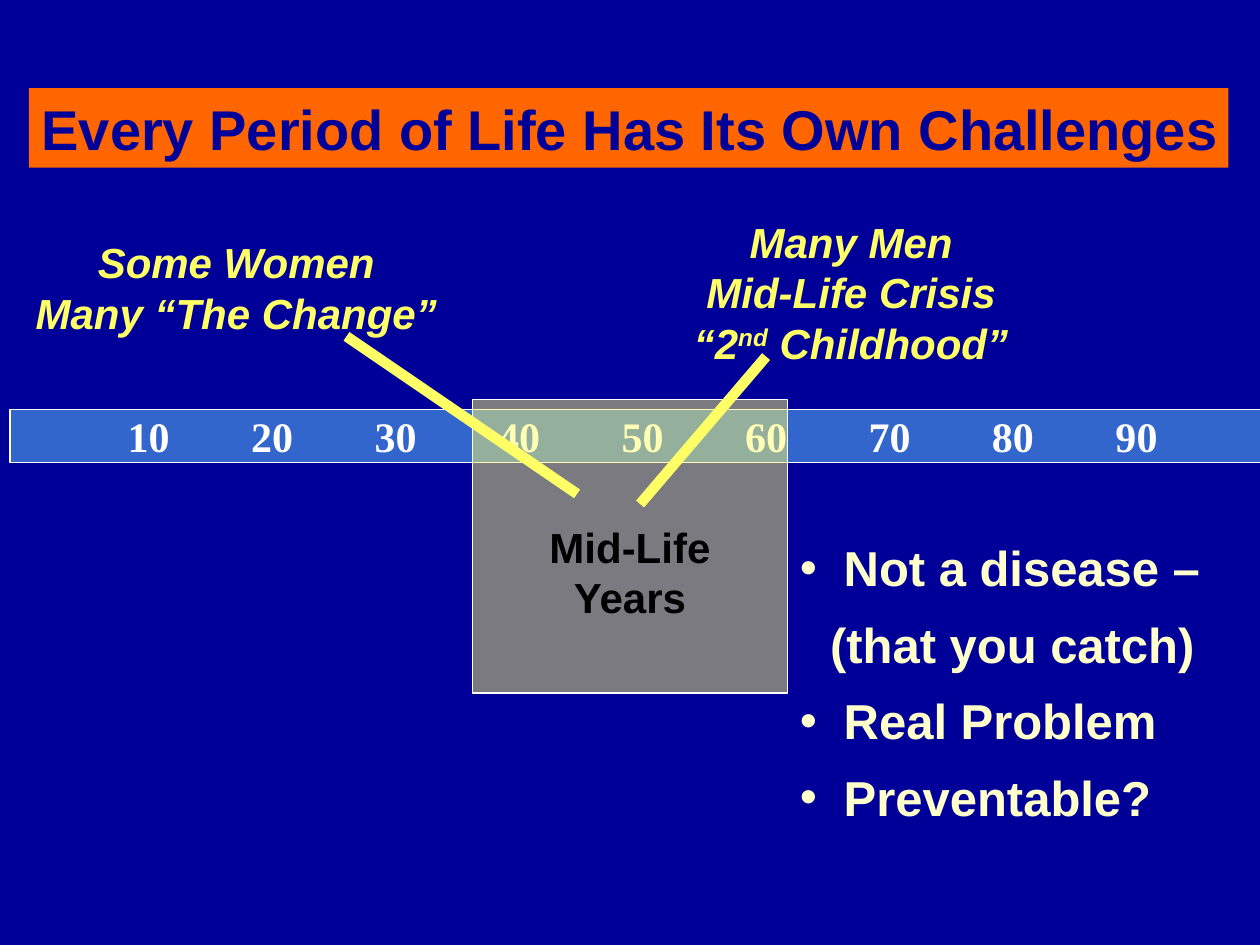
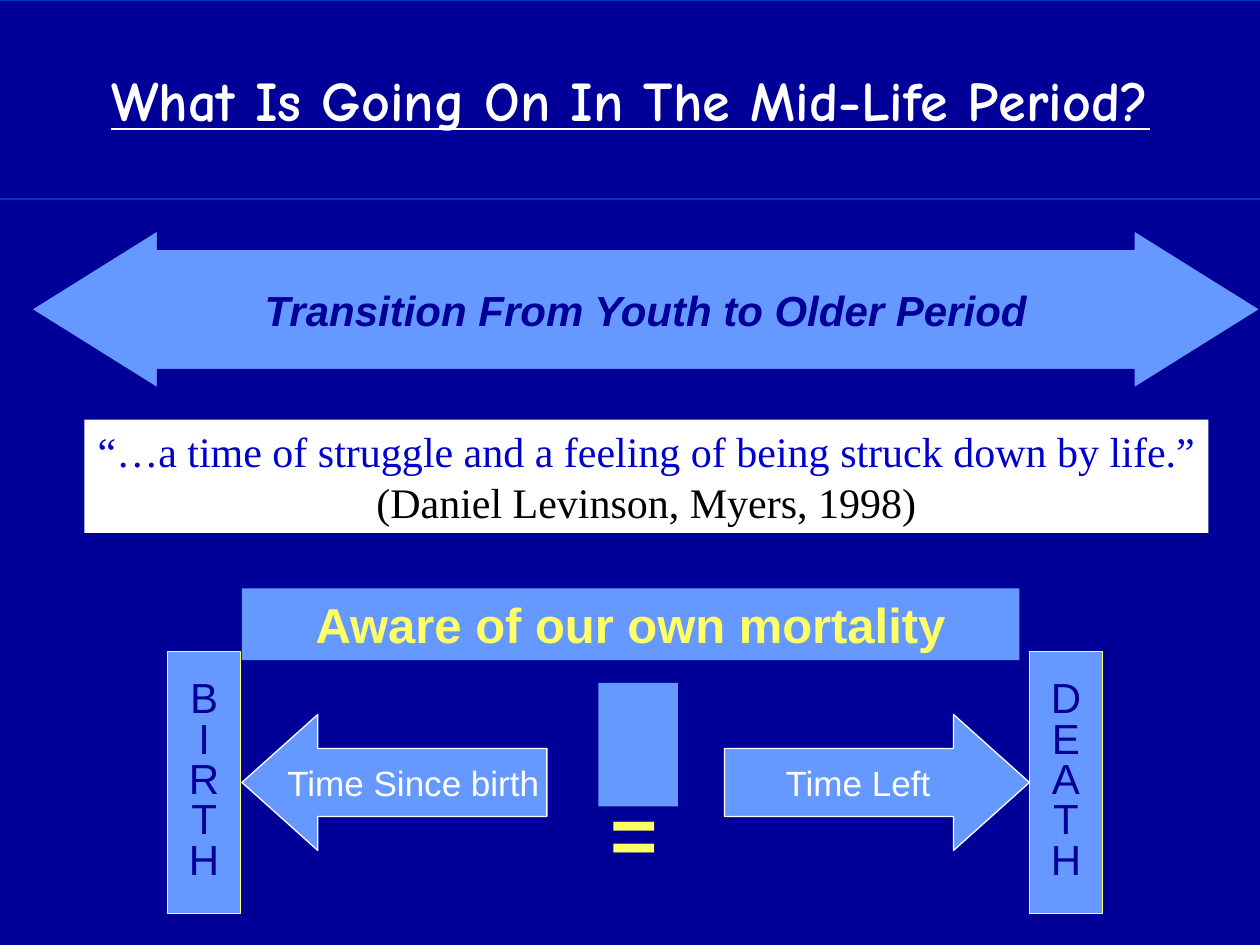
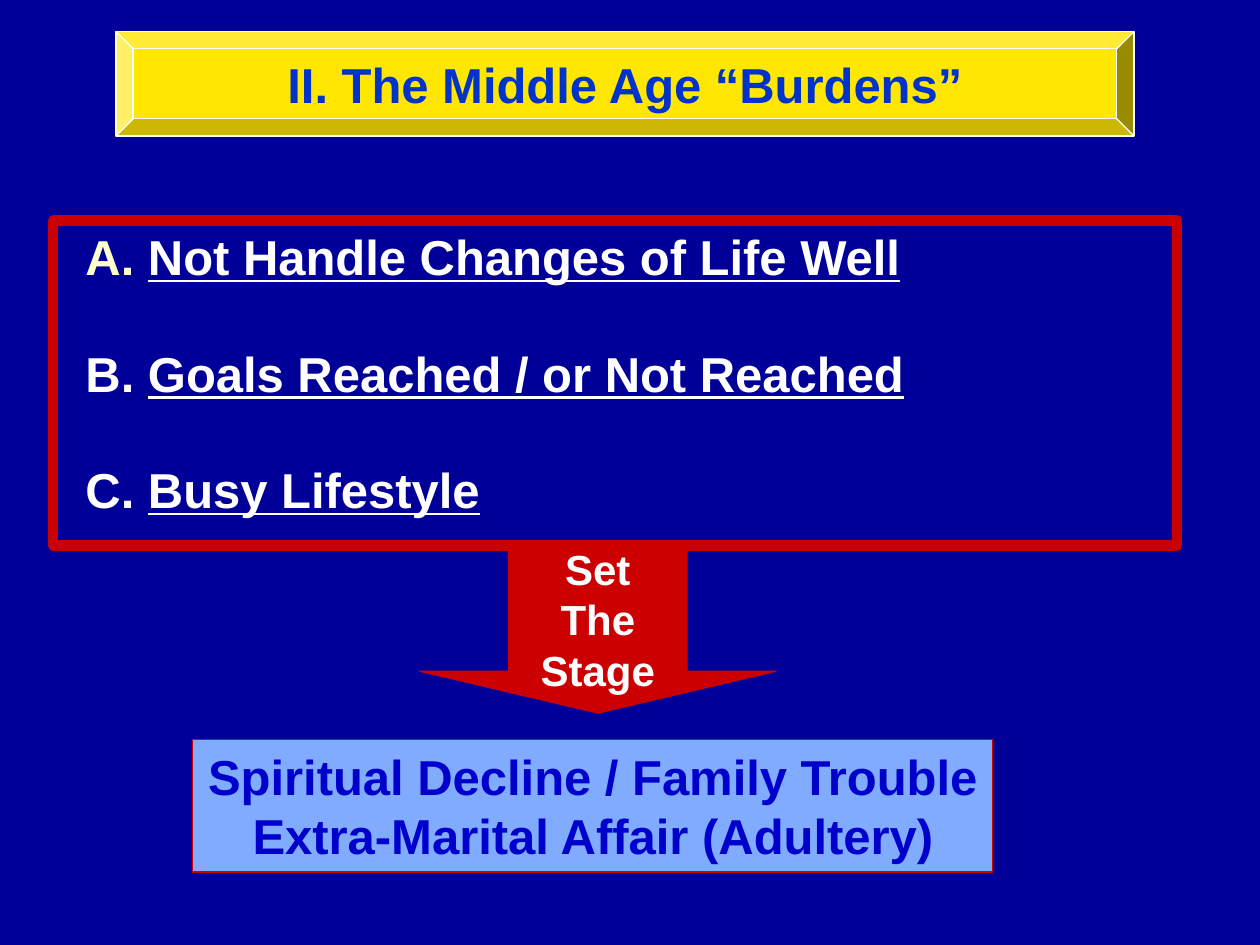
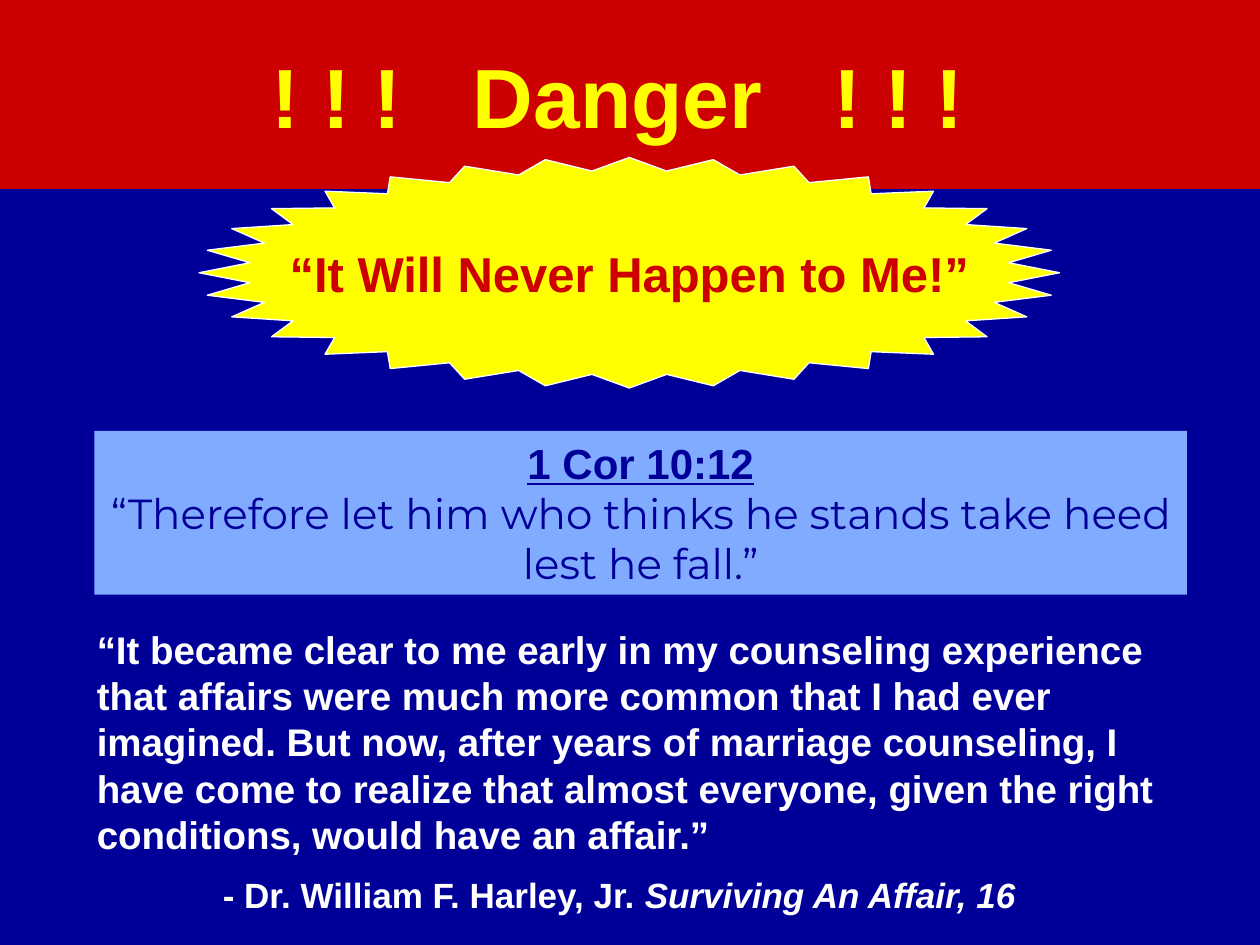
from lxml import etree
from pptx import Presentation
from pptx.dml.color import RGBColor
from pptx.enum.shapes import MSO_CONNECTOR, MSO_SHAPE
from pptx.enum.text import MSO_ANCHOR, MSO_AUTO_SIZE, PP_ALIGN
from pptx.oxml.ns import qn
from pptx.util import Inches, Pt

RECT, BEVEL, STAR = MSO_SHAPE.RECTANGLE, MSO_SHAPE.BEVEL, MSO_SHAPE.STAR_32_POINT
LEFT_ARROW, RIGHT_ARROW = MSO_SHAPE.LEFT_ARROW, MSO_SHAPE.RIGHT_ARROW
DOWN_ARROW, TWO_WAY = MSO_SHAPE.DOWN_ARROW, MSO_SHAPE.LEFT_RIGHT_ARROW
STRAIGHT = MSO_CONNECTOR.STRAIGHT
LEFT, CENTER = PP_ALIGN.LEFT, PP_ALIGN.CENTER
TOP, MIDDLE = MSO_ANCHOR.TOP, MSO_ANCHOR.MIDDLE
NO_AUTOSIZE = MSO_AUTO_SIZE.NONE

C = {"navy": "000099", "orange": "FF6600", "strip": "3366CC", "white": "FFFFFF",
     "lemon": "FFFF66", "cream": "FFFFCC", "black": "000000", "royal": "0033CC",
     "sky": "6699FF", "blue": "0000CC", "gold": "FFE701", "red": "CC0000",
     "pale": "81ABFF", "yellow": "FFFF00"}
W, H = 10, 7.5

# Content: a paragraph is a string or a list of (text, format changes)
AGES = range(10, 100, 10)
MIDLIFE = ["Mid-Life", "Years"]
WOMEN = ["Some Women", "Many “The Change”"]
MEN = ["Many Men", "Mid-Life Crisis",
       [("“2", {}), ("nd", {"baseline": 30}), (" Childhood”", {})]]
POINTS = [" Not a disease – (that you catch)", " Real Problem", " Preventable?"]
POINTERS = [((5.08, 4), (6.08, 2.83)), ((4.58, 3.92), (2.75, 2.67))]
LEVINSON = [[("“…a time of struggle and a feeling of being struck down by life.”", {}),
             (" (Daniel Levinson, Myers, 1998)", {"color": "black"})]]
ENDS = [("BIRTH", 1.33), ("DEATH", 8.17)]
TIMES = [("Time Since birth", LEFT_ARROW, 1.92), ("Time Left", RIGHT_ARROW, 5.75)]
BURDENS = [("A. ", "Not Handle Changes of Life Well", "cream"),
           ("B. ", "Goals Reached / or Not Reached", "white"),
           ("C. ", "Busy Lifestyle", "white")]
STAGE = ["Set", "The", "Stage"]
RESULTS = ["Spiritual Decline / Family Trouble", "Extra-Marital Affair (Adultery)"]
DANGER = ["! ! !", "Danger", "! ! !"]
VERSE = [[("1 Cor 10:12", {"bold": True, "underline": True, "font": "Arial"})],
         "“Therefore let him who thinks he stands take heed lest he fall.”"]
QUOTE = ("“It became clear to me early in my counseling experience that affairs were "
         "much more common that I had ever imagined. But now, after years of marriage "
         "counseling, I have come to realize that almost everyone, given the right "
         "conditions, would have an affair.”")
SOURCE = [[("- Dr. William F. Harley, Jr. ", {}),
           ("Surviving An Affair, 16", {"italic": True})]]


def rgb(name):
    return RGBColor.from_string(C[name])


def format_run(r, size=24, font="Arial", color="white", bold=True, italic=False,
               underline=False, baseline=0):
    f = r.font
    f.size, f.name, f.bold, f.italic, f.underline = Pt(size), font, bold, italic, underline
    f.color.rgb = rgb(color)
    if baseline:
        r._r.get_or_add_rPr().set("baseline", str(baseline * 1000))


def write(sp, paras, align=CENTER, anchor=MIDDLE, wrap=False, spacing=None, before=0,
          bullet=None, tabs=(), indent=0, margins=(0.1, 0.05, 0.1, 0.05), **fmt):
    """Fill a shape with paragraphs; fmt is the format of every run."""
    tf = sp.text_frame
    tf.auto_size, tf.word_wrap, tf.vertical_anchor = NO_AUTOSIZE, wrap, anchor
    tf.margin_left, tf.margin_top, tf.margin_right, tf.margin_bottom = map(Inches, margins)
    for i, para in enumerate(paras):
        p = tf.add_paragraph() if i else tf.paragraphs[0]
        p.alignment = align
        if spacing:
            p.line_spacing = spacing
        if i:
            p.space_before = Pt(before)
        pPr = p._p.get_or_add_pPr()
        pPr.set("marL", str(Inches(indent)))
        if bullet:
            pPr.set("indent", str(-Inches(indent)))
            etree.SubElement(pPr, qn("a:buFont"), typeface="Arial")
            etree.SubElement(pPr, qn("a:buChar"), char=bullet)
        if tabs:
            stops = etree.SubElement(pPr, qn("a:tabLst"))
            for x in tabs:
                etree.SubElement(stops, qn("a:tab"), pos=str(Inches(x)), algn="ctr")
        for text, change in [(para, {})] if isinstance(para, str) else para:
            r = p.add_run()
            r.text = text
            format_run(r, **{**fmt, **change})


def paint(sp, fill=None, line=None, width=0.75, alpha=None):
    sp.shadow.inherit = False
    if fill:
        sp.fill.solid()
        sp.fill.fore_color.rgb = rgb(fill)
        if alpha:
            clr = sp._element.spPr.find(qn("a:solidFill"))[0]
            etree.SubElement(clr, qn("a:alpha"), val=str(alpha * 1000))
    else:
        sp.fill.background()
    if line:
        sp.line.color.rgb, sp.line.width = rgb(line), Pt(width)
    else:
        sp.line.fill.background()


def add_shape(s, box, kind=RECT, adj=(), paras=(), fill=None, line=None, width=0.75,
              alpha=None, **fmt):
    sp = s.shapes.add_shape(kind, *map(Inches, box))
    for i, value in enumerate(adj):
        sp.adjustments[i] = value
    paint(sp, fill, line, width, alpha)
    write(sp, paras, **fmt)
    return sp


def add_text(s, box, paras, **fmt):
    sp = s.shapes.add_textbox(*map(Inches, box))
    write(sp, paras, anchor=TOP, **fmt)


def add_slide(prs, box, title, fill=None, line=None, **fmt):
    """Add a title-only slide whose title is a coloured band."""
    s = prs.slides.add_slide(prs.slide_layouts[5])
    sp = s.shapes.title
    sp.left, sp.top, sp.width, sp.height = map(Inches, box)
    paint(sp, fill, line)
    write(sp, [title], wrap=True, **fmt)
    return s


def add_pointer(s, start, end):
    ln = s.shapes.add_connector(STRAIGHT, *map(Inches, start + end))
    ln.line.color.rgb, ln.line.width = rgb("lemon"), Pt(6)
    etree.SubElement(ln._element.spPr, qn("a:effectLst"))


def periods_slide(prs):
    s = add_slide(prs, (0.23, 0.7, 9.52, 0.63), "Every Period of Life Has Its Own Challenges",
                  fill="orange", size=32, color="navy", align=LEFT,
                  margins=(0.1, 0.05, 0, 0.05))
    # Age strip with evenly spaced decades
    add_shape(s, (0.08, 3.25, W, 0.42), fill="strip", line="white",
              paras=["".join(f"\t{age}" for age in AGES)], font="Times New Roman",
              align=LEFT, wrap=True, margins=(0, 0, 0, 0),
              tabs=[1.1 + 0.98 * i for i in range(len(AGES))])
    add_shape(s, (3.75, 3.17, 2.5, 2.33), fill="lemon", alpha=48, line="white",
              paras=MIDLIFE, color="black", margins=(0.1, 0.45, 0.1, 0.05))
    # Callouts and their pointers
    add_text(s, (5.39, 1.67, 2.73, 1.3), MEN, color="lemon", italic=True)
    for start, end in POINTERS:
        add_pointer(s, start, end)
    add_text(s, (0.18, 1.83, 3.39, 0.9), WOMEN, color="lemon", italic=True)
    add_text(s, (6.25, 4.08, 3.75, 2.53), POINTS, size=28, color="cream", align=LEFT,
             wrap=True, spacing=1.3, bullet="•", indent=0.24)


def transition_slide(prs):
    s = add_slide(prs, (-0.08, 0, 10.17, 1.58), "What Is Going On In The Mid-Life Period?",
                  fill="navy", line="royal", size=32, font="Comic Neue", underline=True)
    add_shape(s, (0.25, 1.83, 9.75, 1.25), TWO_WAY, (0.764, 0.8), fill="sky", line="navy",
              paras=["Transition From Youth to Older Period"], color="navy", italic=True)
    add_shape(s, (0.67, 3.33, 8.92, 0.9), fill="white", paras=LEVINSON, wrap=True,
              anchor=TOP, font="Times New Roman", color="blue", bold=False)
    # Life span from birth to death
    add_shape(s, (1.92, 4.67, 6.17, 0.57), fill="sky",
              paras=["Aware of our own mortality"], size=28, color="lemon")
    for word, x in ENDS:
        add_shape(s, (x, 5.17, 0.58, 2.08), fill="sky", line="lemon", paras=list(word),
                  color="navy", bold=False, spacing=0.8)
    for text, kind, x in TIMES:
        add_shape(s, (x, 5.67, 2.42, 1.08), kind, (0.5, 0.558), fill="sky", line="white",
                  paras=[text], size=20, bold=False)
    add_shape(s, (4.75, 5.42, 0.63, 0.98), fill="sky", paras=["="], size=80,
              color="lemon", baseline=-25, align=LEFT, anchor=TOP)


def burdens_slide(prs):
    box = (0.92, 0.25, 8.08, 0.83)
    s = add_slide(prs, box, "II. The Middle Age “Burdens”", size=28, color="royal")
    # Bevelled plate behind the title
    plate = add_shape(s, box, BEVEL, (0.165,), fill="gold", line="white")
    s.shapes.title._element.addprevious(plate._element)
    burdens = [[(mark, {"color": color}), (text, {"underline": True})]
               for mark, text, color in BURDENS]
    add_text(s, (0.58, 1.75, 6.71, 2.44), burdens, size=28, align=LEFT, before=33)
    # Frame and the arrow that leads on from it
    add_shape(s, (3.33, 4.33, 2.83, 1.33), DOWN_ARROW, (0.5, 0.25), fill="red", line="red",
              paras=STAGE)
    add_shape(s, (0.42, 1.75, 8.92, 2.58), line="red", width=6)
    add_shape(s, (1.53, 5.87, 6.35, 1.05), fill="pale", line="red", paras=RESULTS,
              size=28, color="blue")


def danger_slide(prs):
    s = add_slide(prs, (0, 0, W, H / 5), "".join(f"\t{part}" for part in DANGER),
                  fill="red", size=48, color="yellow", align=LEFT,
                  margins=(0, 0.05, 0, 0.05), tabs=(2.67, 4.9, 7.13))
    add_shape(s, (1.58, 1.25, 6.83, 1.83), STAR, (0.443,), fill="yellow", line="white",
              paras=["“It Will Never Happen to Me!”"], size=28, color="red")
    add_shape(s, (0.75, 3.42, 8.67, 1.3), fill="pale", paras=VERSE, wrap=True, anchor=TOP,
              font="Montserrat", color="navy", bold=False)
    # Quotation, then its indented source
    add_text(s, (0.67, 4.92, 8.83, 1.95), [QUOTE], size=22, align=LEFT, wrap=True)
    add_text(s, (0.67, 6.88, 8.83, 0.47), SOURCE, size=20, align=LEFT, wrap=True, indent=1)


def main():
    prs = Presentation()
    prs.slide_width, prs.slide_height = Inches(W), Inches(H)
    background = prs.slide_master.background.fill
    background.solid()
    background.fore_color.rgb = rgb("navy")
    for build in (periods_slide, transition_slide, burdens_slide, danger_slide):
        build(prs)
    prs.save("out.pptx")


if __name__ == "__main__":
    main()
